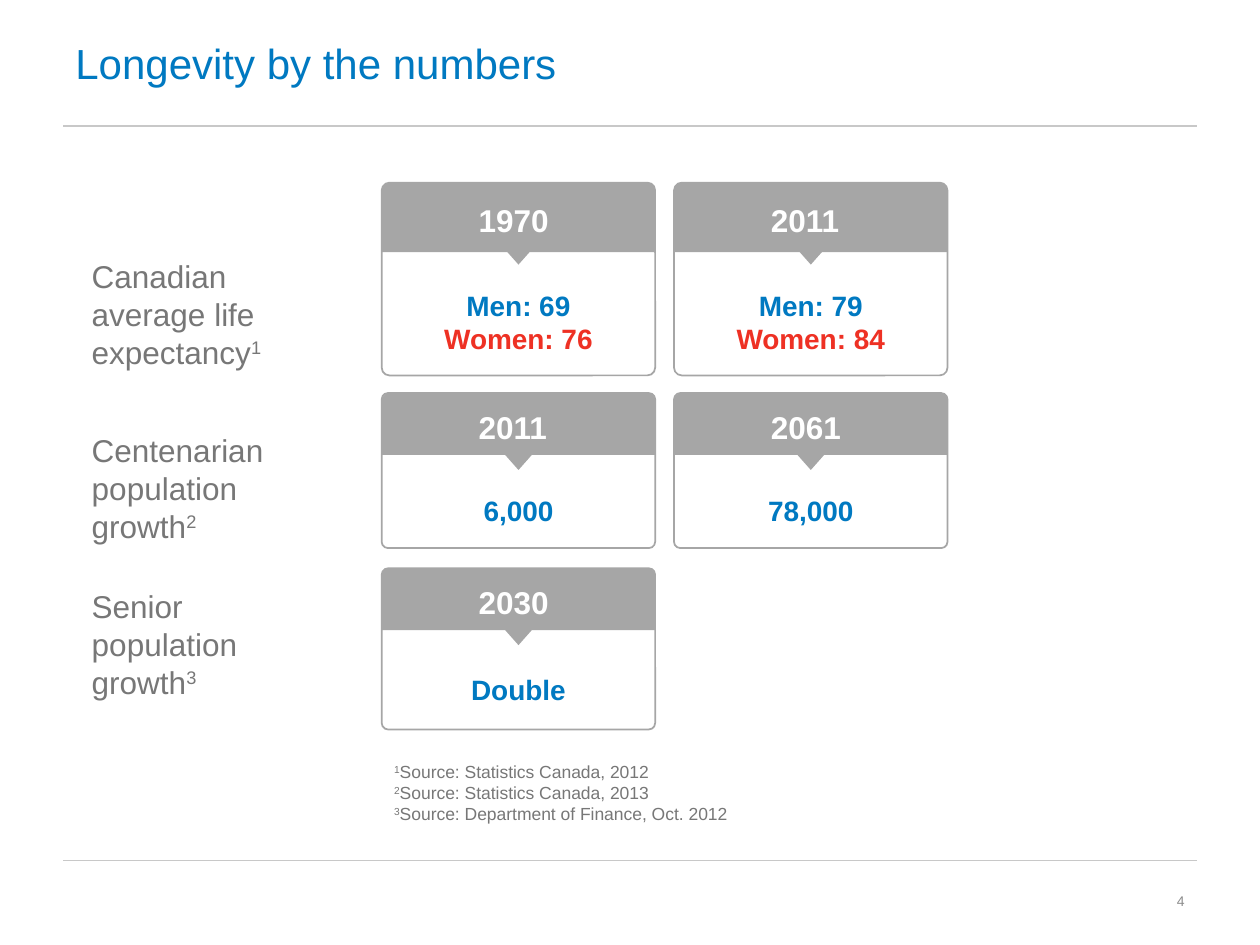
"""Build the slide of longevity figures as rows of year cards."""
from dataclasses import dataclass
from lxml import etree
from pptx import Presentation
from pptx import util as u
from pptx.dml.color import RGBColor
from pptx.enum import shapes, text
from pptx.oxml.ns import qn


@dataclass(frozen=True)
class Theme:
    font: str = "Arial"
    blue: str = "0079C1"
    red: str = "EE3124"
    gray: str = "777777"
    card: str = "A6A6A6"
    rule: str = "C8C8C8"
    page: str = "8C8C8C"
    white: str = "FFFFFF"
    title: int = 24
    body: int = 18
    value: int = 16
    note: int = 10
    small: int = 8


T = Theme()
TITLE = "Longevity by the numbers"
PAGE = "4"
ROWS = [
    dict(label="Canadian average life expectancy", mid=2.49, wide=2.17,
         top=1.45, high=1.53, head=0.55, tip=2.1, year=1.55, value=2.24,
         cards=[("1970", ["Men: 69", "Women: 76"]),
                ("2011", ["Men: 79", "Women: 84"])]),
    dict(label="Centenarian population growth", mid=3.87, wide=2.17,
         top=3.12, high=1.23, head=0.49, tip=3.73, year=3.19, value=3.87,
         cards=[("2011", ["6,000"]), ("2061", ["78,000"])]),
    dict(label="Senior population growth", mid=5.11, wide=1.9,
         top=4.51, high=1.28, head=0.49, tip=5.12, year=4.58, value=5.29,
         cards=[("2030", ["Double"])]),
]
NOTES = ["Statistics Canada, 2012", "Statistics Canada, 2013",
         "Department of Finance, Oct. 2012"]
WIDE, HIGH, EDGE = 10, 7.5, 0.5
LEFT, CARD, STEP = 3.03, 2.17, 2.32
TIP_W, TIP_H = 0.39, 0.22
SHAPE = shapes.MSO_SHAPE
ALIGN = text.PP_ALIGN
MID = text.MSO_ANCHOR.MIDDLE


def color(hue):
    return RGBColor.from_string(hue)


def box(at, lines, size, hue, bold=False, align=ALIGN.LEFT,
        anchor=text.MSO_ANCHOR.TOP, wrap=True):
    """Add text; each line is a list of (words, raised) runs or a string."""
    frame = slide.shapes.add_textbox(*map(u.Inches, at)).text_frame
    frame.word_wrap, frame.vertical_anchor = wrap, anchor
    hues = hue if isinstance(hue, tuple) else (hue,) * len(lines)
    for i, (line, tint) in enumerate(zip(lines, hues)):
        par = frame.paragraphs[0] if i == 0 else frame.add_paragraph()
        par.alignment = align
        font = par.font
        font.name, font.size, font.bold = T.font, u.Pt(size), bold
        font.color.rgb = color(tint)
        for words, high in [(line, False)] if isinstance(line, str) else line:
            run = par.add_run()
            run.text = words
            if high:
                run._r.get_or_add_rPr().set("baseline", "30000")


def block(kind, at, fill=None, line=None):
    item = slide.shapes.add_shape(kind, *map(u.Inches, at))
    item.shadow.inherit = False
    if fill:
        item.fill.solid()
        item.fill.fore_color.rgb = color(fill)
    else:
        item.fill.background()
    if line:
        item.line.color.rgb = color(line)
        item.line.width = u.Pt(1)
    else:
        item.line.fill.background()
    return item


def rule(y):
    line = slide.shapes.add_connector(
        shapes.MSO_CONNECTOR.STRAIGHT,
        *map(u.Inches, (EDGE, y, WIDE - EDGE, y)))
    line.line.color.rgb = color(T.rule)
    line.line.width = u.Pt(0.75)
    etree.SubElement(line._element.spPr, qn("a:effectLst"))


def card(x, row, year, values):
    head = block(SHAPE.ROUND_2_SAME_RECTANGLE,
                 (x, row["top"], CARD, row["head"]), T.card)
    head.adjustments[0] = 0.12
    body = block(SHAPE.ROUNDED_RECTANGLE,
                 (x, row["top"], CARD, row["high"]), line=T.card)
    body.adjustments[0] = 0.04
    tip = block(SHAPE.ISOSCELES_TRIANGLE,
                (x + (CARD - TIP_W) / 2, row["tip"] - TIP_H, TIP_W, TIP_H),
                T.card)
    tip.rotation = 180
    box((x + 0.67, row["year"], 0.76, 0.4), [year], T.body, T.white,
        bold=True, wrap=False)
    box((x, row["value"], CARD, 0.1 + 0.27 * len(values)), values, T.value,
        (T.blue, T.red), bold=True, align=ALIGN.CENTER)


deck = Presentation()
deck.slide_width, deck.slide_height = u.Inches(WIDE), u.Inches(HIGH)
slide = deck.slides.add_slide(deck.slide_layouts[6])

for y in (1, 6.83):
    rule(y)
box((EDGE, 0, WIDE - 2 * EDGE, 1), [TITLE], T.title, T.blue, anchor=MID)
for num, row in enumerate(ROWS, 1):
    box((0.63, row["mid"] - 0.69, row["wide"], 1.38),
        [[(row["label"], False), (str(num), True)]], T.body, T.gray, anchor=MID)
    for col, (year, values) in enumerate(row["cards"]):
        card(LEFT + col * STEP, row, year, values)
box((LEFT, 5.99, 4.74, 0.61),
    [[(str(num), True), (f"Source: {name}", False)]
     for num, name in enumerate(NOTES, 1)], T.note, T.gray)
box((7.17, 6.95, 2.33, 0.4), [PAGE], T.small, T.page,
    align=ALIGN.RIGHT, anchor=MID)

deck.save("out.pptx")
